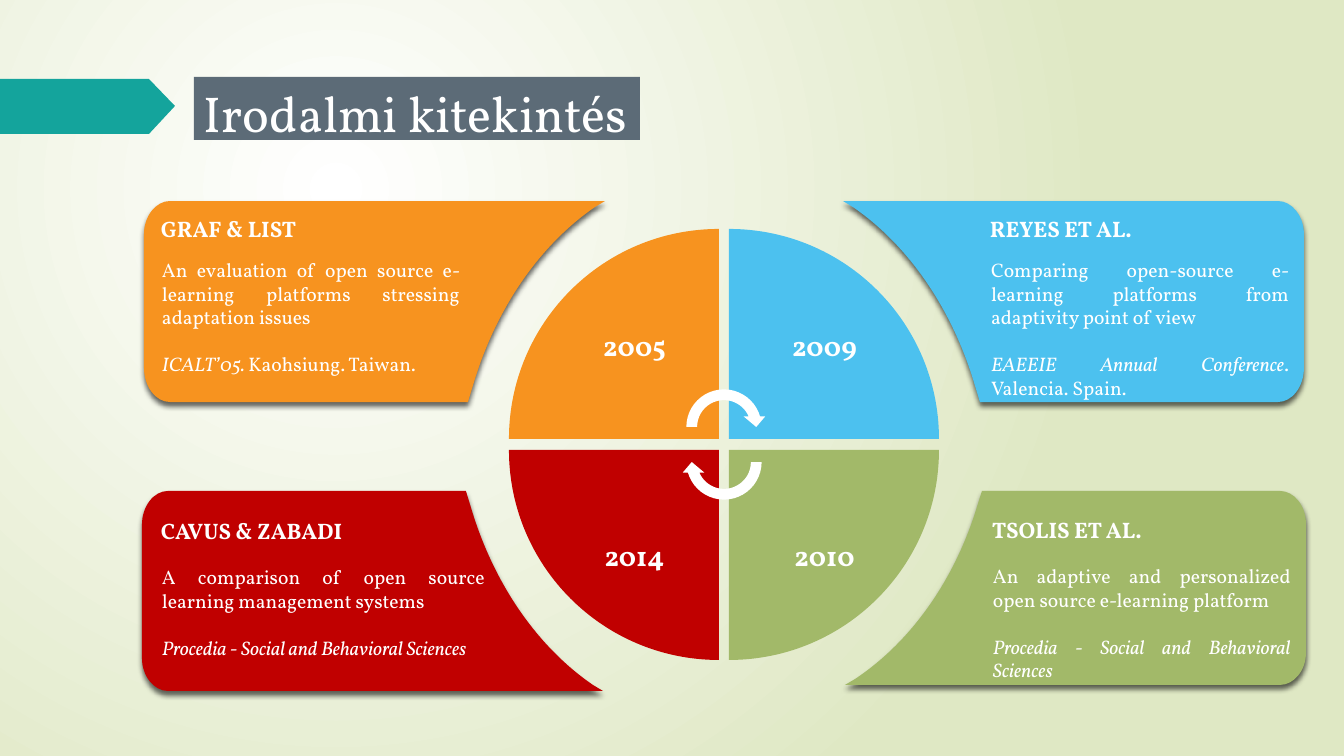
"""Build the literature review slide: four studies around a divided circle."""
from lxml import etree
from pptx import Presentation
from pptx.dml.color import RGBColor
from pptx.enum.shapes import MSO_SHAPE
from pptx.enum.text import MSO_ANCHOR, PP_ALIGN
from pptx.oxml.ns import qn
from pptx.util import Pt

ARROW = MSO_SHAPE.CIRCULAR_ARROW
TOP, BOTTOM = MSO_ANCHOR.TOP, MSO_ANCHOR.BOTTOM
LEFT, CENTER, JUSTIFY = PP_ALIGN.LEFT, PP_ALIGN.CENTER, PP_ALIGN.JUSTIFY

PX = 914400 / 100.8
FONT = "Vollkorn"
COLORS = {
    "white": "FFFFFF", "pale": "DFE8C4", "teal": "14A49C", "slate": "5C6B77",
    "orange": "F7931F", "blue": "4CC1EF", "red": "C00000", "green": "A2B969",
    "black": "000000",
}
TAG_OUTLINE = [[(0, 0)], [(149, 0)], [(175, 27)], [(149, 55)], [(0, 55)]]
WEDGE_OUTLINE = [[(0, 210)], [(0, 94), (94, 0), (210, 0)], [(210, 210)]]
CARD_OUTLINE = [
    [(26, 0)], [(461, 0)], [(451, 6)],
    [(397, 43), (354, 104), (331, 177)],
    [(324, 200)], [(26, 200)],
    [(12, 200), (0, 185), (0, 166)],
    [(0, 33)],
    [(0, 15), (12, 0), (26, 0)],
]

presentation = Presentation()
presentation.slide_width = round(1344 * PX)
presentation.slide_height = round(756 * PX)
slide = presentation.slides.add_slide(presentation.slide_layouts[6])
shapes = slide.shapes


def paint(shape, color):
    """Give a shape a plain fill without line or shadow."""
    shape.fill.solid()
    shape.fill.fore_color.rgb = RGBColor.from_string(COLORS[color])
    shape.line.fill.background()
    shape.shadow.inherit = False


def draw(outline, box, color, column=0, row=0):
    """Draw an outline of lines (1 point) and curves (3 points), mirrored by column and row."""
    left, top, width, height = box
    full_height = max(y for segment in outline for x, y in segment)
    points = []
    for segment in outline:
        for x, y in segment:
            mirrored_x = width - x if column else x
            mirrored_y = full_height - y if row else y
            points.append(((left + mirrored_x) * PX,
                           (top + mirrored_y * height / full_height) * PX))
    builder = shapes.build_freeform(*points[0])
    builder.add_line_segments(points[1:], close=True)
    shape = builder.convert_to_shape()
    path = next(shape.element.iter(qn("a:path")))
    lines = iter(path.findall(qn("a:lnTo")))
    for segment in outline[1:]:
        command = next(lines)
        if len(segment) == 3:
            command.tag = qn("a:cubicBezTo")
            for extra in (next(lines), next(lines)):
                command.append(extra[0])
                path.remove(extra)
    paint(shape, color)
    return shape


background_fill = slide.background.fill
background_fill.gradient()
for stop, color in zip(background_fill.gradient_stops, ("white", "pale")):
    stop.color.rgb = RGBColor.from_string(COLORS[color])
linear = next(slide.element.iter(qn("a:lin")))
radial = etree.Element(qn("a:path"), {"path": "circle"})
etree.SubElement(radial, qn("a:fillToRect"),
                 {"l": "50000", "t": "50000", "r": "100000", "b": "100000"})
linear.getparent().replace(linear, radial)

draw(TAG_OUTLINE, (0, 79, 175, 55), "teal")

studies = [
    ("GRAF & LIST", "2005", "orange", (144, 201, 461, 201), (0, 0), (161, 210, 253, 298),
     "An evaluation of open source e-learning platforms stressing adaptation issues",
     [("ICALT’05. ", True), ("Kaohsiung. Taiwan.", False)]),
    ("REYES ET AL.", "2009", "blue", (843, 201, 461, 201), (1, 0), (990, 210, 253, 298),
     "Comparing open-source e-learning platforms from adaptivity point of view",
     [("EAEEIE Annual Conference", True), (". Valencia. Spain.", False)]),
    ("TSOLIS ET AL.", "2010", "green", (845, 491, 461, 194), (1, 1), (992, 511, 559, 298),
     "An adaptive and personalized open source e-learning platform",
     [("Procedia - Social and Behavioral Sciences", True)]),
    ("CAVUS & ZABADI", "2014", "red", (142, 491, 461, 200), (0, 1), (161, 512, 560, 323),
     "A comparison of open source learning management systems",
     [("Procedia - Social and Behavioral Sciences", True)]),
]

texts = [((194, 77, 446, 63), [[("Irodalmi kitekintés", False)]], 36, TOP, LEFT, False)]
for authors, year, color, card_box, (column, row), text_place, topic, venue in studies:
    card = draw(CARD_OUTLINE, card_box, color, column, row)
    effects = next(card.element.iter(qn("a:effectLst")))
    shadow = etree.SubElement(effects, qn("a:outerShdw"), {
        "blurRad": str(Pt(4)), "dist": str(Pt(3)), "dir": "5400000", "rotWithShape": "0"})
    shadow_color = etree.SubElement(shadow, qn("a:srgbClr"), {"val": COLORS["black"]})
    etree.SubElement(shadow_color, qn("a:alpha"), {"val": "60000"})

    wedge_box = (509 + 220 * column, 229 + 221 * row, 210, 210)
    draw(WEDGE_OUTLINE, wedge_box, color, column, row)

    text_left, heading_top, body_top, body_width = text_place
    texts += [
        ((text_left, heading_top, 299, 37), [[(authors, False)]], 16, BOTTOM, LEFT, True),
        ((text_left + 1, body_top, body_width, 130), [[(topic, False)], venue],
         14, TOP, JUSTIFY, False),
        ((598 + 190 * column, 323 + 210 * row, 73, 44), [[(year, False)]],
         20, BOTTOM, CENTER, True),
    ]

for box, paragraphs, size, anchor, align, bold in texts:
    text_box = shapes.add_textbox(*[round(value * PX) for value in box])
    frame = text_box.text_frame
    frame.word_wrap = True
    frame.vertical_anchor = anchor
    if size == 36:
        paint(text_box, "slate")
    else:
        frame.margin_left = frame.margin_right = 0
    for index, runs in enumerate(paragraphs):
        paragraph = frame.add_paragraph() if index else frame.paragraphs[0]
        paragraph.alignment = align
        if index:
            paragraph.space_before = Pt(16.8)
        for text, italic in runs:
            run = paragraph.add_run()
            run.text = text
            run.font.name = FONT
            run.font.size = Pt(size)
            run.font.bold = bold
            run.font.italic = italic
            run.font.color.rgb = RGBColor.from_string(COLORS["white"])

for arrow_top, rotation in ((384, 0), (419, 180)):
    arrow = shapes.add_shape(ARROW, round(681 * PX), round(arrow_top * PX),
                             round(86 * PX), round(86 * PX))
    arrow.rotation = rotation
    paint(arrow, "white")

presentation.save("out.pptx")
